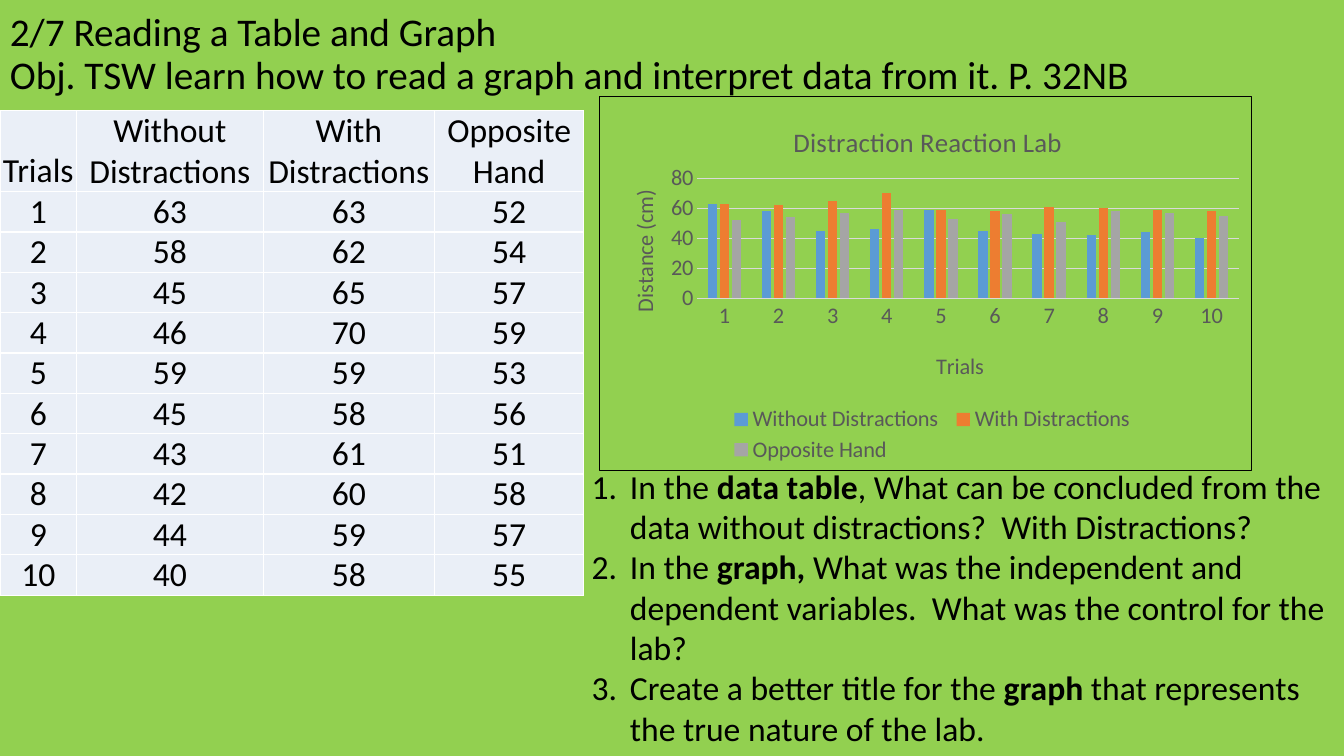
from lxml import etree
from pptx import Presentation
from pptx.chart.data import CategoryChartData
from pptx.dml.color import RGBColor
from pptx.enum.chart import XL_CHART_TYPE, XL_LEGEND_POSITION, XL_TICK_MARK
from pptx.enum.text import MSO_ANCHOR, PP_ALIGN
from pptx.oxml import parse_xml
from pptx.oxml.ns import nsdecls, qn
from pptx.util import Inches, Pt

COLUMNS = XL_CHART_TYPE.COLUMN_CLUSTERED
LEGEND_BOTTOM = XL_LEGEND_POSITION.BOTTOM
NO_TICKS = XL_TICK_MARK.NONE
MIDDLE, BOTTOM = MSO_ANCHOR.MIDDLE, MSO_ANCHOR.BOTTOM
CENTER = PP_ALIGN.CENTER

GREEN = RGBColor(0x92, 0xD0, 0x50)
BLACK = RGBColor(0x00, 0x00, 0x00)
GRAY = RGBColor(0x59, 0x59, 0x59)
GRID = RGBColor(0xD9, 0xD9, 0xD9)
CELL = RGBColor(0xEA, 0xEF, 0xF7)
WHITE = RGBColor(0xFF, 0xFF, 0xFF)
FONT = "Calibri"

HEADING = {"name": FONT, "size": Pt(28), "color": BLACK}
BODY = {"name": FONT, "size": Pt(24), "color": BLACK}
CHART_TITLE = {"name": FONT, "size": Pt(19.2), "bold": False, "color": GRAY}
CHART_TEXT = {"name": FONT, "size": Pt(16), "bold": False, "color": GRAY}

TRIALS = [str(number) for number in range(1, 11)]
RESULTS = {
    "Without Distractions": [63, 58, 45, 46, 59, 45, 43, 42, 44, 40],
    "With Distractions": [63, 62, 65, 70, 59, 58, 61, 60, 59, 58],
    "Opposite Hand": [52, 54, 57, 59, 53, 56, 51, 58, 57, 55],
}
SERIES_COLORS = [
    RGBColor(0x5B, 0x9B, 0xD5),
    RGBColor(0xED, 0x7D, 0x31),
    RGBColor(0xA5, 0xA5, 0xA5),
]
# Each question: text before, bold word, text after
QUESTIONS = [
    ("In the ", "data table", ", What can be concluded from the data "
     "without distractions?  With Distractions?"),
    ("In the ", "graph,", " What was the independent and dependent "
     "variables.  What was the control for the lab?"),
    ("Create a better title for the ", "graph",
     " that represents the true nature of the lab."),
]


def style_font(font, values):
    for name, value in values.items():
        if name == "color":
            font.color.rgb = value
        else:
            setattr(font, name, value)


def style_line(line, color, width=0.75):
    line.color.rgb = color
    line.width = Pt(width)


def add_frame(page, box):
    frame = page.shapes.add_textbox(*map(Inches, box)).text_frame
    frame.word_wrap = True
    return frame


def add_heading(page, box):
    frame = add_frame(page, box)
    frame.vertical_anchor = MIDDLE
    para = frame.paragraphs[0]
    para.line_spacing = 0.9
    para.text = ("2/7 Reading a Table and Graph\vObj. TSW learn how to read "
                 "a graph and interpret data from it. P. 32NB")
    for span in para.runs:
        style_font(span.font, HEADING)


def add_borders(cell):
    properties = cell._tc.get_or_add_tcPr()
    for index, side in enumerate(("lnL", "lnR", "lnT", "lnB")):
        properties.insert(index, parse_xml(
            f'<a:{side} {nsdecls("a")} w="12700"><a:solidFill>'
            f'<a:srgbClr val="{WHITE}"/></a:solidFill></a:{side}>'))


def add_results_table(page, box):
    rows = [("Trials", *RESULTS), *zip(TRIALS, *RESULTS.values())]
    widths = [0.76, 1.85, 1.7, 1.48]
    table = page.shapes.add_table(
        len(rows), len(widths), *map(Inches, box)).table
    table.first_row = table.horz_banding = False
    for column, width in zip(table.columns, widths):
        column.width = Inches(width)
    # The header is two lines high, every other row one line
    line_height = box[3] / (len(rows) + 1)
    for index, values in enumerate(rows):
        table.rows[index].height = Inches(line_height * (1 if index else 2))
        for cell, value in zip(table.rows[index].cells, values):
            cell.fill.solid()
            cell.fill.fore_color.rgb = CELL
            cell.vertical_anchor = BOTTOM
            for side in ("left", "right", "top", "bottom"):
                setattr(cell, f"margin_{side}", 0)
            para = cell.text_frame.paragraphs[0]
            para.alignment = CENTER
            span = para.add_run()
            span.text = str(value)
            style_font(span.font, BODY)
            add_borders(cell)


def place_part(part, inner=False, **fractions):
    """Place a chart part at fractions of the chart's size."""
    for old in part.findall(qn("c:layout")):
        part.remove(old)
    layout = parse_xml(f'<c:layout {nsdecls("c")}><c:manualLayout/></c:layout>')
    settings = {"layoutTarget": "inner"} if inner else {}
    settings.update(xMode="edge", yMode="edge", **fractions)
    for name, value in settings.items():
        etree.SubElement(layout[0], qn(f"c:{name}")).set("val", str(value))
    has_head = len(part) and part[0].tag in (qn("c:tx"), qn("c:legendPos"))
    part.insert(1 if has_head else 0, layout)


def add_title(owner, title, text, values, x, y):
    owner.has_title = True
    title = getattr(owner, title)
    para = title.text_frame.paragraphs[0]
    span = para.add_run()
    span.text = text
    style_font(span.font, values)
    place_part(title._element, x=x, y=y)


def add_results_chart(page, box):
    data = CategoryChartData()
    data.categories = TRIALS
    for name, values in RESULTS.items():
        data.add_series(name, values)
    chart = page.shapes.add_chart(COLUMNS, *map(Inches, box), data).chart
    style_font(chart.font, CHART_TEXT)

    # Columns
    plot = chart.plots[0]
    plot.gap_width, plot.overlap, plot.vary_by_categories = 219, -27, False
    for series, color in zip(plot.series, SERIES_COLORS):
        series.format.fill.solid()
        series.format.fill.fore_color.rgb = color
    place_part(chart._chartSpace.chart.plotArea, inner=True,
               x=0.15, y=0.22, w=0.83, h=0.32)

    # Axes and titles
    trials, distance = chart.category_axis, chart.value_axis
    for axis in (trials, distance):
        axis.major_tick_mark = axis.minor_tick_mark = NO_TICKS
        style_font(axis.tick_labels.font, CHART_TEXT)
    style_line(trials.format.line, GRID)
    distance.format.line.fill.background()
    distance.minimum_scale, distance.maximum_scale = 0, 80
    distance.major_unit = 20
    style_line(distance.major_gridlines.format.line, GRID)
    add_title(chart, "chart_title", "Distraction Reaction Lab",
              CHART_TITLE, 0.29, 0.06)
    add_title(trials, "axis_title", "Trials", CHART_TEXT, 0.51, 0.67)
    add_title(distance, "axis_title", "Distance (cm)", CHART_TEXT, 0.04, 0.24)

    # Legend and outer border
    chart.has_legend = True
    chart.legend.position = LEGEND_BOTTOM
    chart.legend.include_in_layout = False
    style_font(chart.legend.font, CHART_TEXT)
    place_part(chart.legend._element, x=0.19, y=0.82, w=0.64, h=0.17)
    border = parse_xml(
        f'<c:spPr {nsdecls("c", "a")}><a:noFill/><a:ln w="9525"><a:solidFill>'
        f'<a:srgbClr val="{BLACK}"/></a:solidFill></a:ln></c:spPr>')
    chart._chartSpace.chart.addnext(border)


def add_questions(page, box):
    frame = add_frame(page, box)
    indent = Inches(0.38)
    for index, pieces in enumerate(QUESTIONS):
        para = frame.add_paragraph() if index else frame.paragraphs[0]
        properties = para._p.get_or_add_pPr()
        properties.set("marL", str(indent))
        properties.set("indent", str(-indent))
        number = etree.SubElement(properties, qn("a:buAutoNum"))
        number.set("type", "arabicPeriod")
        for position, text in enumerate(pieces):
            span = para.add_run()
            span.text = text
            style_font(span.font, {**BODY, "bold": position == 1})


def main():
    deck = Presentation()
    deck.slide_width, deck.slide_height = Inches(13.33), Inches(7.5)
    page = deck.slides.add_slide(deck.slide_layouts[6])
    page.background.fill.solid()
    page.background.fill.fore_color.rgb = GREEN
    add_heading(page, (0, 0, 13.33, 1.1))
    add_results_table(page, (0, 1.1, 5.79, 4.8))
    add_results_chart(page, (5.94, 0.95, 6.48, 3.72))
    add_questions(page, (5.77, 4.57, 7.56, 2.93))
    deck.save("out.pptx")


if __name__ == "__main__":
    main()
